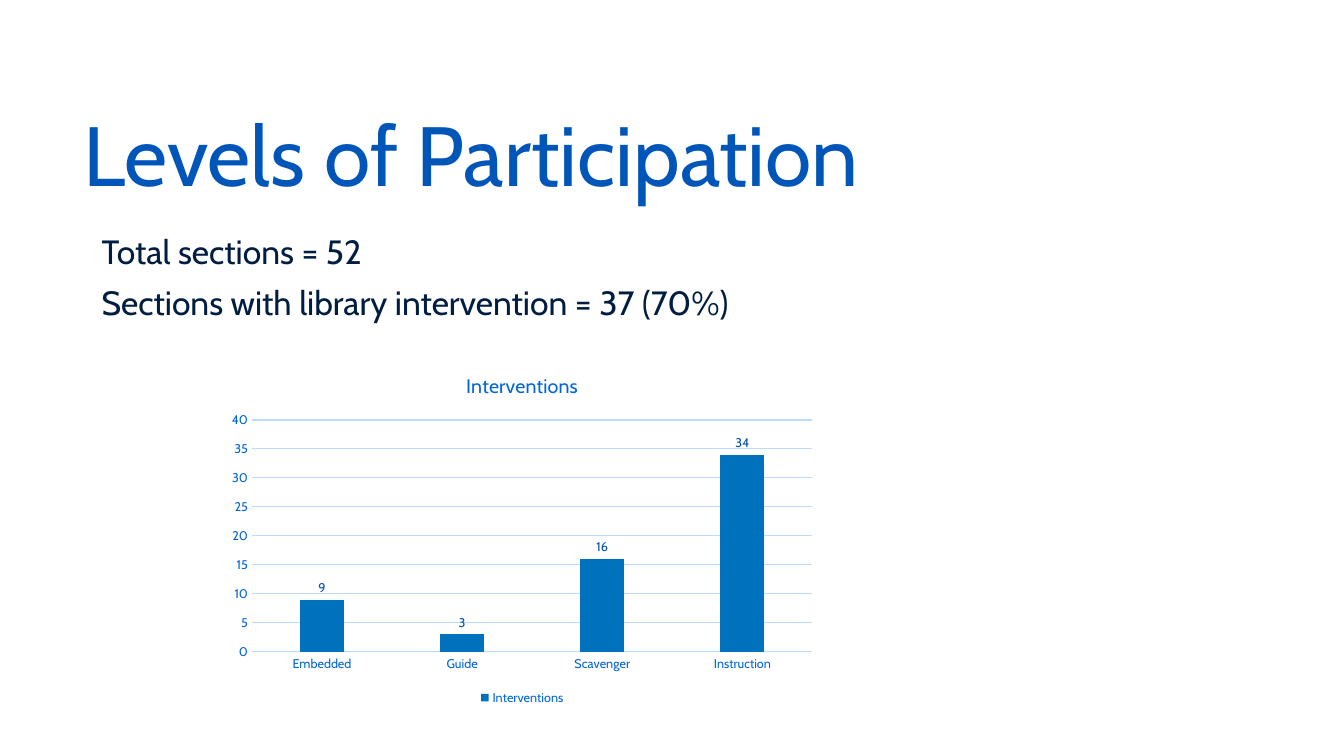
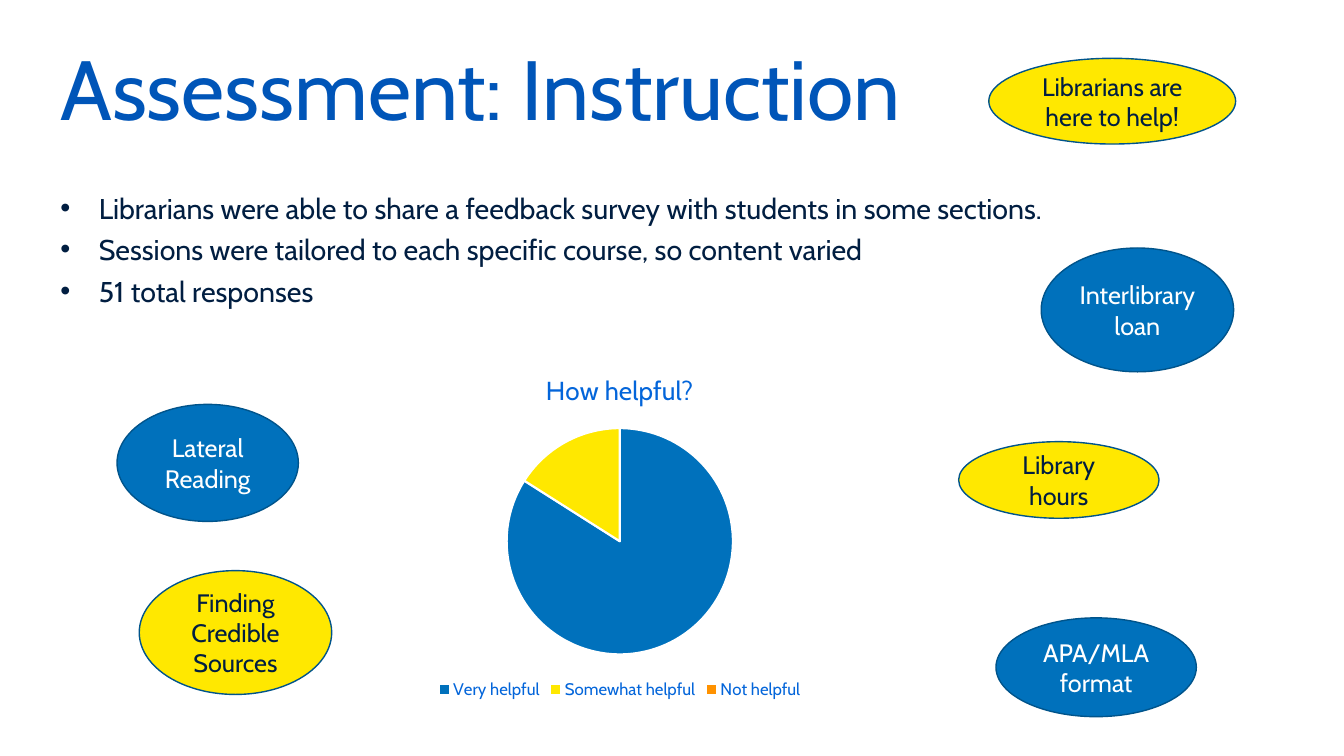
from lxml import etree
from pptx import Presentation
from pptx.chart.data import CategoryChartData
from pptx.dml.color import RGBColor
from pptx.enum.chart import XL_CHART_TYPE, XL_LABEL_POSITION, XL_LEGEND_POSITION, XL_TICK_MARK
from pptx.enum.shapes import MSO_SHAPE
from pptx.enum.text import MSO_ANCHOR, MSO_AUTO_SIZE, PP_ALIGN
from pptx.oxml.ns import qn
from pptx.util import Cm, Pt

COLUMN, PIE = XL_CHART_TYPE.COLUMN_CLUSTERED, XL_CHART_TYPE.PIE
OUTSIDE_END = XL_LABEL_POSITION.OUTSIDE_END
LEGEND_BOTTOM = XL_LEGEND_POSITION.BOTTOM
NO_TICK = XL_TICK_MARK.NONE
ELLIPSE = MSO_SHAPE.OVAL
TOP, MIDDLE, BOTTOM = MSO_ANCHOR.TOP, MSO_ANCHOR.MIDDLE, MSO_ANCHOR.BOTTOM
NO_FIT = MSO_AUTO_SIZE.NONE
LEFT, CENTER = PP_ALIGN.LEFT, PP_ALIGN.CENTER

FONT = "Cabin"
COLORS = {
    "title": "0055B8",
    "ink": "011E41",
    "blue": "0071BC",
    "yellow": "FFE800",
    "orange": "FF9200",
    "outline": "00548B",
    "white": "FFFFFF",
    "chart_text": "0365DA",
    "value_label": "0350AE",
    "grid": "BDDBFE",
}
TITLE_ONLY = 5
BULLET_INDENT = Cm(0.97)


def color(name):
    return RGBColor.from_string(COLORS[name])


def style_font(font, size, color_name):
    font.name = FONT
    font.size = Pt(size)
    font.bold = False
    font.color.rgb = color(color_name)


def add_run(paragraph, text, size, color_name):
    run = paragraph.add_run()
    run.text = text
    style_font(run.font, size, color_name)


def style_line(line, color_name, width):
    line.color.rgb = color(color_name)
    line.width = Pt(width)


def lengths(box):
    return [Cm(value) for value in box]


def add_bullet(paragraph):
    properties = paragraph._p.get_or_add_pPr()
    properties.set("marL", str(BULLET_INDENT))
    properties.set("indent", str(-BULLET_INDENT))
    etree.SubElement(properties, qn("a:buFont")).set("typeface", "Arial")
    etree.SubElement(properties, qn("a:buChar")).set("char", "•")


# Slide with its title
def add_titled_slide(deck, text, box):
    slide = deck.slides.add_slide(deck.slide_layouts[TITLE_ONLY])
    title = slide.shapes.title
    title.left, title.top, title.width, title.height = lengths(box)
    frame = title.text_frame
    frame.word_wrap = True
    frame.auto_size = NO_FIT
    frame.vertical_anchor = BOTTOM
    paragraph = frame.paragraphs[0]
    paragraph.alignment = LEFT
    paragraph.line_spacing = 0.9
    add_run(paragraph, text, 60, "title")
    return slide


# Body text, with or without bullets
def add_body(slide, box, lines, size, spacing, bulleted=False):
    frame = slide.shapes.add_textbox(*lengths(box)).text_frame
    frame.word_wrap = True
    frame.vertical_anchor = TOP
    for index, line in enumerate(lines):
        paragraph = frame.add_paragraph() if index else frame.paragraphs[0]
        if bulleted:
            add_bullet(paragraph)
        paragraph.line_spacing = spacing
        if index:
            paragraph.space_before = Pt(10)
        add_run(paragraph, line, size, "ink")


# Topic bubble
def add_bubble(slide, box, text, fill_name, text_color):
    bubble = slide.shapes.add_shape(ELLIPSE, *lengths(box))
    bubble.shadow.inherit = False
    bubble.fill.solid()
    bubble.fill.fore_color.rgb = color(fill_name)
    style_line(bubble.line, "outline", 1)
    frame = bubble.text_frame
    frame.word_wrap = True
    frame.vertical_anchor = MIDDLE
    paragraph = frame.paragraphs[0]
    paragraph.alignment = CENTER
    add_run(paragraph, text, 18, text_color)


# What both charts share: one series, a title and a legend below
def add_titled_chart(slide, kind, box, name, values, title_size, legend_size):
    data = CategoryChartData()
    data.categories = list(values)
    data.add_series(name, list(values.values()))
    chart = slide.shapes.add_chart(kind, *lengths(box), data).chart
    style_font(chart.font, 10, "ink")
    chart.has_title = True
    add_run(chart.chart_title.text_frame.paragraphs[0], name, title_size, "chart_text")
    chart.chart_title.include_in_layout = False
    chart.has_legend = True
    chart.legend.position = LEGEND_BOTTOM
    chart.legend.include_in_layout = False
    style_font(chart.legend.font, legend_size, "chart_text")
    return chart


def add_interventions_chart(slide, box):
    counts = {"Embedded": 9, "Guide": 3, "Scavenger": 16, "Instruction": 34}
    chart = add_titled_chart(slide, COLUMN, box, "Interventions", counts, 14, 9)
    columns = chart.plots[0]
    columns.vary_by_categories = False
    columns.gap_width = 219
    columns.overlap = -27
    fill = columns.series[0].format.fill
    fill.solid()
    fill.fore_color.rgb = color("blue")

    # Value labels
    columns.has_data_labels = True
    labels = columns.data_labels
    labels.show_value = True
    labels.position = OUTSIDE_END
    style_font(labels.font, 9, "value_label")

    # Axes
    for axis in (chart.category_axis, chart.value_axis):
        axis.major_tick_mark = NO_TICK
        axis.minor_tick_mark = NO_TICK
        style_font(axis.tick_labels.font, 9, "chart_text")
    style_line(chart.category_axis.format.line, "grid", 0.75)
    counts_axis = chart.value_axis
    counts_axis.minimum_scale = 0
    counts_axis.maximum_scale = 40
    counts_axis.major_unit = 5
    counts_axis.format.line.fill.background()
    counts_axis.has_major_gridlines = True
    style_line(counts_axis.major_gridlines.format.line, "grid", 0.75)


def add_helpfulness_chart(slide, box):
    shares = {"Very helpful": 84, "Somewhat helpful": 16, "Not helpful": 0}
    chart = add_titled_chart(slide, PIE, box, "How helpful?", shares, 18.6, 12)
    pie = chart.plots[0]
    pie.vary_by_categories = True
    for index, fill_name in enumerate(("blue", "yellow", "orange")):
        slice_format = pie.series[0].points[index].format
        slice_format.fill.solid()
        slice_format.fill.fore_color.rgb = color(fill_name)
        style_line(slice_format.line, "white", 1.5)


def build_participation(deck):
    slide = add_titled_slide(deck, "Levels of Participation", (1.85, 1.83, 26.92, 3.45))
    add_body(slide, (2.31, 5.82, 17.07, 2.9), [
        "Total sections = 52",
        "Sections with library intervention = 37 (70%)",
    ], 24, 0.9)
    add_interventions_chart(slide, (5.54, 8.99, 15.24, 8.89))


def build_assessment(deck):
    slide = add_titled_slide(deck, "Assessment: Instruction", (1.27, 0.99, 26.92, 2.64))
    add_body(slide, (1.27, 4.85, 26.92, 3.15), [
        "Librarians were able to share a feedback survey with students in some sections.",
        "Sessions were tailored to each specific course, so content varied",
        "51 total responses",
    ], 20.4, 0.8, bulleted=True)

    # Topics around the chart
    bubble_styles = {
        "blue": ("white", [
            ("Lateral Reading", (2.95, 10.19, 4.57, 2.95)),
            ("Interlibrary loan", (26.24, 6.25, 4.85, 3.12)),
            ("APA/MLA format", (25.1, 15.57, 5.05, 2.49)),
        ]),
        "yellow": ("ink", [
            ("Finding Credible Sources", (3.51, 14.38, 4.85, 3.12)),
            ("Library hours", (24.16, 11.13, 5.05, 1.93)),
            ("Librarians are here to help!", (24.92, 1.47, 6.22, 2.16)),
        ]),
    }
    for fill_name, (text_color, topics) in bubble_styles.items():
        for topic, box in topics:
            add_bubble(slide, box, topic, fill_name, text_color)
    add_helpfulness_chart(slide, (7.49, 8.94, 16.26, 8.79))


def main():
    deck = Presentation()
    deck.slide_width, deck.slide_height = Cm(33.87), Cm(19.05)
    build_participation(deck)
    build_assessment(deck)
    deck.save("out.pptx")


if __name__ == "__main__":
    main()
